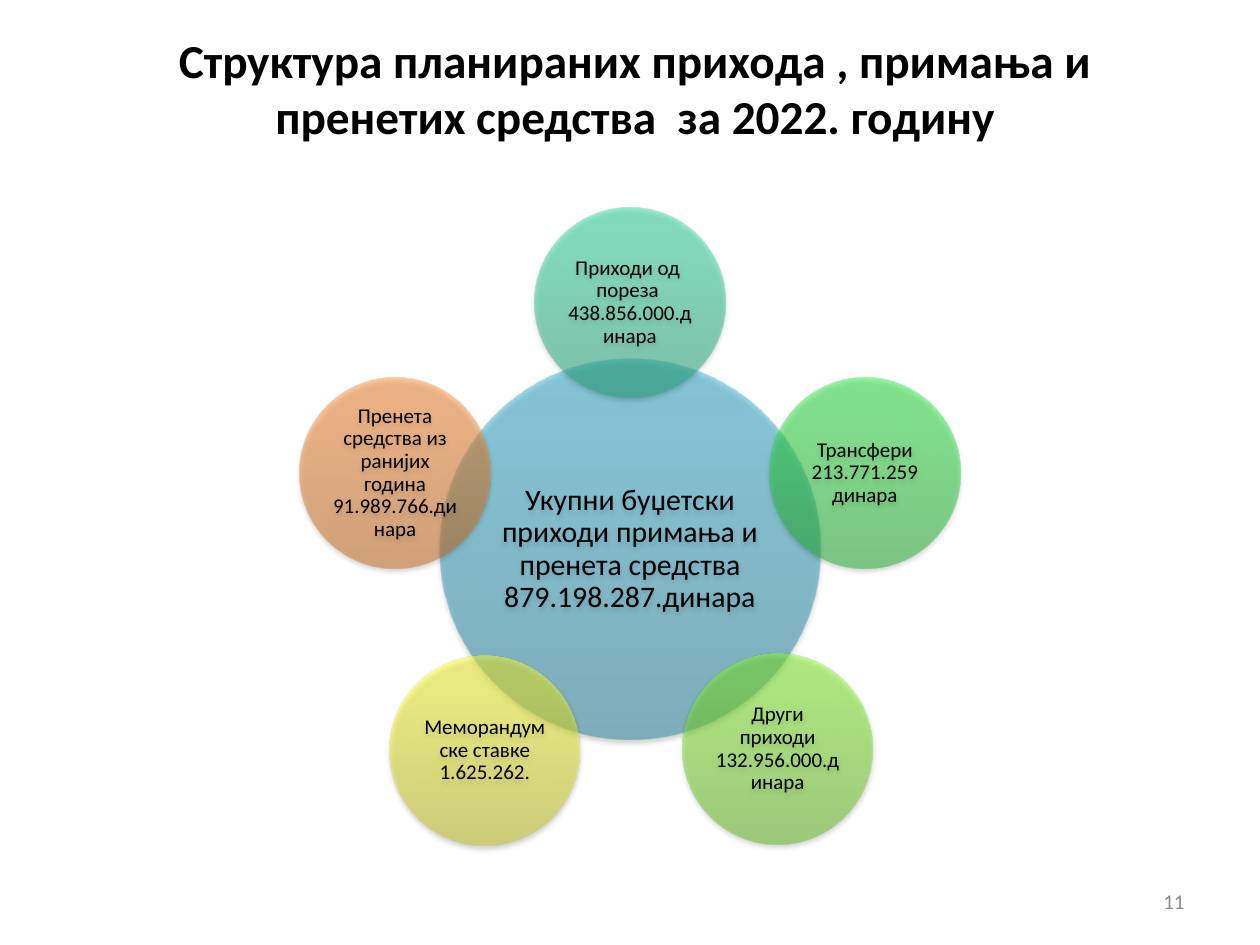
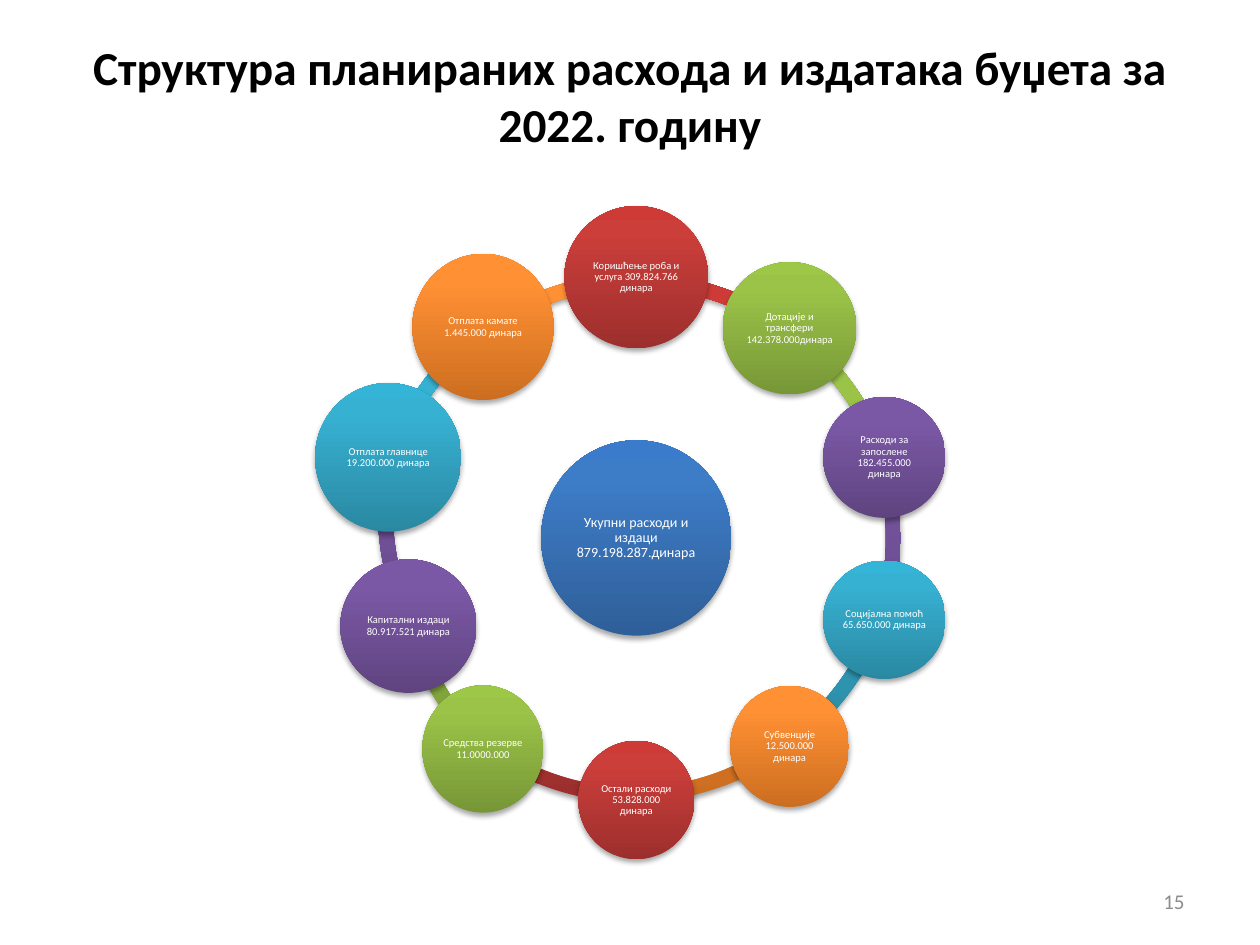
from math import cos, radians, sin

from lxml.etree import SubElement
from pptx import Presentation
from pptx.dml.color import RGBColor
from pptx.enum.shapes import MSO_SHAPE
from pptx.enum.text import MSO_ANCHOR, PP_ALIGN
from pptx.oxml.ns import qn
from pptx.util import Inches, Pt

FONT = "Calibri"
BLACK = RGBColor(0x00, 0x00, 0x00)
WHITE = RGBColor(0xFF, 0xFF, 0xFF)
GRAY = RGBColor(0x8C, 0x8C, 0x8C)

# Gradients from the bottom (0 %) over 80 % to the top (100 %)
BLUE = RGBColor(0x2F, 0x5F, 0x99), RGBColor(0x3D, 0x7C, 0xC7), RGBColor(0x3A, 0x7C, 0xCB)
RED = RGBColor(0x9C, 0x2F, 0x2D), RGBColor(0xCB, 0x3E, 0x3A), RGBColor(0xCE, 0x3B, 0x37)
OLIVE = RGBColor(0x77, 0x97, 0x37), RGBColor(0x9B, 0xC3, 0x48), RGBColor(0x9D, 0xC7, 0x46)
PURPLE = RGBColor(0x5F, 0x44, 0x80), RGBColor(0x7B, 0x58, 0xA6), RGBColor(0x7C, 0x57, 0xA8)
AQUA = RGBColor(0x2A, 0x88, 0xA2), RGBColor(0x37, 0xB1, 0xD2), RGBColor(0x34, 0xB4, 0xD6)
ORANGE = RGBColor(0xCC, 0x6E, 0x20), RGBColor(0xFF, 0x90, 0x34), RGBColor(0xFF, 0x91, 0x36)
MINT = RGBColor(0x27, 0xAB, 0x7E), RGBColor(0x32, 0xDF, 0xA4), RGBColor(0x2F, 0xE3, 0xA6)
GREEN = RGBColor(0x24, 0xB5, 0x34), RGBColor(0x2F, 0xEB, 0x43), RGBColor(0x2C, 0xEF, 0x41)
LIME = RGBColor(0x67, 0xBD, 0x22), RGBColor(0x86, 0xF6, 0x2D), RGBColor(0x86, 0xFB, 0x29)
YELLOW = RGBColor(0xC4, 0xC5, 0x21), RGBColor(0xFE, 0xFF, 0x2C), RGBColor(0xFE, 0xFF, 0x2D)

# Nodes run clockwise from the top: text, gradient, (width, height), nudge off the circle
SMALL = (1.51, 1.51)
REVENUE = {
    "title": "Структура планираних прихода , примања и пренетих средства  за 2022. годину",
    "title_at": (0.54, 0.27, 9, 0.85),
    "number": "11",
    "center": (5, 4.36),
    "radius": 1.96,
    "opacity": 50,
    "color": BLACK,
    "sizes": (17, 12),
    "inset": 0.02,
    "arcs": [],
    "hub": ("Укупни буџетски приходи примања и пренета средства 879.198.287.динара",
            AQUA, (3.02, 3.02), (0, 0)),
    "nodes": [
        ("Приходи од  пореза  438.856.000.динара", MINT, SMALL, (0, 0)),
        ("Трансфери 213.771.259\nдинара", GREEN, SMALL, (0, 0)),
        ("Други приходи 132.956.000.динара", LIME, SMALL, (0.02, 0)),
        ("Меморандумске ставке 1.625.262.", YELLOW, SMALL, (0, 0.01)),
        ("Пренета средства из ранијих година 91.989.766.динара", ORANGE, SMALL, (0, 0)),
    ],
}

# Arcs: gradient, start and end in degrees, left, top
ARC_SIZE, ARC_THICKNESS = 4.2, 0.028
EXPENSES = {
    "title": "Структура планираних расхода и издатака буџета за 2022. годину",
    "title_at": (0.5, 0.29, 9, 0.93),
    "number": "15",
    "center": (5.05, 4.27),
    "radius": 2.07,
    "opacity": 100,
    "color": WHITE,
    "sizes": (8, 6),
    "inset": 0.01,
    "arcs": [
        (ORANGE, 234, 270, 2.95, 2.17),
        (AQUA, 198, 234, 2.95, 2.17),
        (PURPLE, 154.14, 191.88, 3, 1.96),
        (OLIVE, 133.03, 165.23, 3.14, 2.34),
        (RED, 90, 126, 2.95, 2.17),
        (ORANGE, 52.43, 88.92, 2.91, 2.17),
        (AQUA, 19.12, 54.22, 2.96, 2.14),
        (PURPLE, 342, 18, 2.95, 2.17),
        (OLIVE, 306, 342, 2.97, 2.18),
        (RED, 270, 306, 2.95, 2.17),
    ],
    "hub": ("Укупни расходи и издаци 879.198.287.динара", BLUE, (1.51, 1.55), (0, 0)),
    "nodes": [
        ("Коришћење роба и услуга 309.824.766 динара", RED, (1.14, 1.13), (0, 0)),
        ("Дотације и трансфери 142.378.000динара", OLIVE, (1.06, 1.05), (0, 0.01)),
        ("Расходи за запослене 182.455.000 динара", PURPLE, (0.97, 0.96), (0, 0)),
        ("Социјална помоћ 65.650.000 динара", AQUA, (0.97, 0.94), (0, 0.01)),
        ("Субвенције 12.500.000 динара", ORANGE, (0.94, 0.96), (0, -0.02)),
        ("Остали расходи 53.828.000 динара", RED, (0.92, 0.94), (0, 0.01)),
        ("Средства резерве 11.0000.000", OLIVE, (0.96, 1.01), (0, 0)),
        ("Капитални издаци 80.917.521 динара", PURPLE, (1.08, 1.06), (0.16, 0.06)),
        ("Отплата главнице 19.200.000 динара", AQUA, (1.16, 1.18), (0, 0)),
        ("Отплата камате 1.445.000 динара", ORANGE, (1.12, 1.16), (0, 0)),
    ],
}


def write(shape, text, size, color, align=PP_ALIGN.CENTER, bold=False):
    frame = shape.text_frame
    frame.word_wrap = True
    frame.vertical_anchor = MSO_ANCHOR.MIDDLE
    para = frame.paragraphs[0]
    para.alignment = align
    for index, line in enumerate(text.split("\n")):
        if index:
            para.add_line_break()
        span = para.add_run()
        span.text = line
        span.font.name, span.font.size, span.font.bold = FONT, Pt(size), bold
        span.font.color.rgb = color
    return para


def add_color(parent, color, opacity):
    node = SubElement(parent, qn("a:srgbClr"), val=str(color))
    if opacity < 100:
        SubElement(node, qn("a:alpha"), val=str(opacity * 1000))


def style(shape, gradient, opacity):
    """Give a shape its three-stop gradient and soft shadow below."""
    shape.line.fill.background()
    shape.fill.gradient()
    shape.fill.gradient_angle = 90
    properties = shape.element.spPr
    stops = properties.find(".//" + qn("a:gsLst"))
    for stop in list(stops):
        stops.remove(stop)
    for position, color in zip((0, 80, 100), gradient):
        add_color(SubElement(stops, qn("a:gs"), pos=str(position * 1000)), color, opacity)
    shape.shadow.inherit = False
    shadow = SubElement(properties.find(qn("a:effectLst")), qn("a:outerShdw"),
                        blurRad=str(Pt(3.1)), dist=str(Pt(1.8)), dir="5400000", rotWithShape="0")
    add_color(shadow, BLACK, 35)


def add_circle(page, data, node, x, y, size):
    text, gradient, (width, height), (dx, dy) = node
    circle = page.shapes.add_shape(
        MSO_SHAPE.OVAL, Inches(x + dx - width / 2), Inches(y + dy - height / 2),
        Inches(width), Inches(height))
    style(circle, gradient, data["opacity"])
    frame = circle.text_frame
    frame.margin_left = frame.margin_right = Inches(data["inset"])
    frame.margin_top = frame.margin_bottom = Inches(data["inset"])
    write(circle, text, size, data["color"]).line_spacing = 0.9


def add_arc(page, data, arc):
    gradient, start, end, left, top = arc
    shape = page.shapes.add_shape(MSO_SHAPE.BLOCK_ARC, Inches(left), Inches(top),
                                  Inches(ARC_SIZE), Inches(ARC_SIZE))
    # Angles are stored in 60000ths of a degree, adjustments in 100000ths
    shape.adjustments[0] = start * 0.6
    shape.adjustments[1] = end * 0.6
    shape.adjustments[2] = ARC_THICKNESS
    style(shape, gradient, data["opacity"])


def build(deck, data):
    page = deck.slides.add_slide(deck.slide_layouts[6])

    # Title and page number
    title = page.shapes.add_textbox(*map(Inches, data["title_at"]))
    write(title, data["title"], 27, BLACK, bold=True)
    number = page.shapes.add_textbox(Inches(7.17), Inches(6.95), Inches(2.33), Inches(0.4))
    write(number, data["number"], 12, GRAY, PP_ALIGN.RIGHT)

    # Ring, hub and the nodes at equal angles around it
    for arc in data["arcs"]:
        add_arc(page, data, arc)
    x, y = data["center"]
    hub_size, node_size = data["sizes"]
    add_circle(page, data, data["hub"], x, y, hub_size)
    for index, node in enumerate(data["nodes"]):
        angle = radians(360 / len(data["nodes"]) * index)
        add_circle(page, data, node, x + data["radius"] * sin(angle),
                   y - data["radius"] * cos(angle), node_size)


def main():
    deck = Presentation()
    deck.slide_width, deck.slide_height = Inches(10), Inches(7.5)
    for data in (REVENUE, EXPENSES):
        build(deck, data)
    deck.save("out.pptx")


if __name__ == "__main__":
    main()
